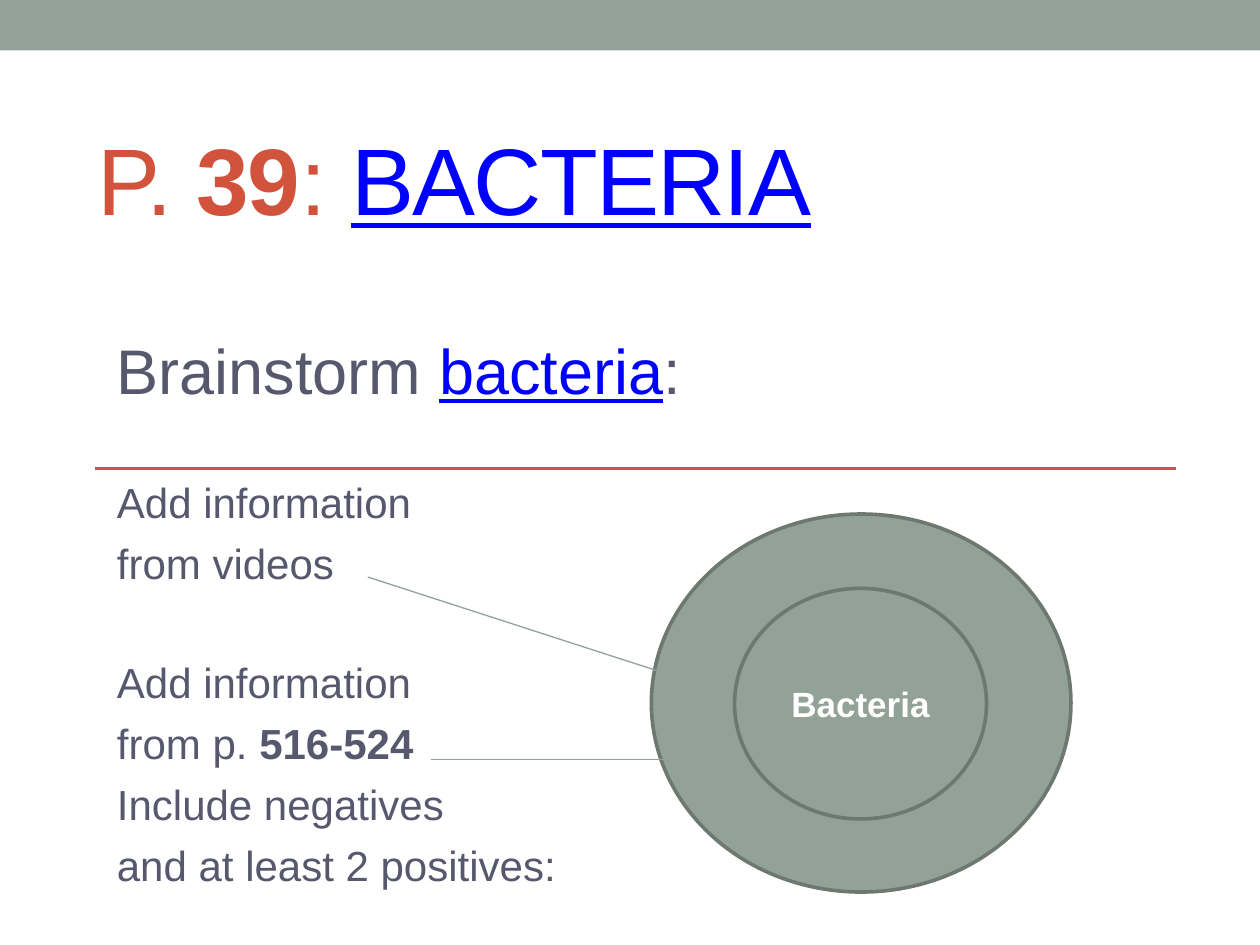
from typing import NamedTuple

from lxml.etree import SubElement
from pptx import Presentation
from pptx.dml.color import RGBColor
from pptx.enum.shapes import MSO_CONNECTOR, MSO_SHAPE
from pptx.enum.text import MSO_ANCHOR as Anchor, MSO_AUTO_SIZE, PP_ALIGN as Align
from pptx.oxml.ns import qn
from pptx.util import Inches, Pt

FONT = "Arial"
SAGE, DARK_SAGE, RUST = "93A299", "6D7871", "D2533C"
SLATE, LINK_BLUE, WHITE = "57576E", "0000FF", "FFFFFF"
LINE_GAP = 6
SECTION_GAP = 39.6  # one 24 pt line plus two line gaps


class Span(NamedTuple):
    text: str
    color: str = SLATE
    bold: bool = False
    underline: bool = False


class Line(NamedTuple):
    spans: list[Span]
    size: float = 24
    before: float = LINE_GAP


class Rule(NamedTuple):
    start: tuple[float, float]
    end: tuple[float, float]
    color: str = SAGE
    width: float = 0.75
    arrow: bool = False


class Figure(NamedTuple):
    kind: MSO_SHAPE
    box: tuple[float, float, float, float]
    outline: str | None = DARK_SAGE


def rgb(color: str) -> RGBColor:
    return RGBColor.from_string(color)


def write_line(paragraph, line: Line, align=Align.LEFT, tracking: int = 0) -> None:
    """Add the spans as runs; tracking is in hundredths of a point."""
    paragraph.alignment = align
    paragraph.space_before = Pt(line.before)
    for span in line.spans:
        run = paragraph.add_run()
        run.text = span.text
        font = run.font
        font.name, font.size = FONT, Pt(line.size)
        font.bold, font.underline = span.bold, span.underline
        font.color.rgb = rgb(span.color)
        if tracking:
            run._r.get_or_add_rPr().set("spc", str(tracking))


def draw_figure(slide, figure: Figure):
    shape = slide.shapes.add_shape(figure.kind, *map(Inches, figure.box))
    shape.shadow.inherit = False
    shape.fill.solid()
    shape.fill.fore_color.rgb = rgb(SAGE)
    if figure.outline:
        shape.line.color.rgb = rgb(figure.outline)
        shape.line.width = Pt(2.08)
    else:
        shape.line.fill.background()
    return shape


def draw_rule(slide, rule: Rule) -> None:
    connector = slide.shapes.add_connector(
        MSO_CONNECTOR.STRAIGHT, *map(Inches, rule.start + rule.end))
    connector.line.color.rgb = rgb(rule.color)
    connector.line.width = Pt(rule.width)
    if rule.arrow:
        SubElement(connector.line._get_or_add_ln(), qn("a:tailEnd"), type="arrow")
    SubElement(connector._element.spPr, qn("a:effectLst"))


def fill_title(slide) -> None:
    title = slide.shapes.title
    title.left, title.top, title.width, title.height = map(
        Inches, (0.67, 0.83, 8.58, 1.08))
    frame = title.text_frame
    frame.auto_size = MSO_AUTO_SIZE.NONE
    frame.vertical_anchor = Anchor.BOTTOM
    spans = [Span("P. ", RUST), Span("39", RUST, bold=True), Span(": ", RUST),
             Span("BACTERIA", LINK_BLUE, underline=True)]
    write_line(frame.paragraphs[0], Line(spans, 54, 0), tracking=-100)


def add_instructions(slide) -> None:
    lines = [
        Line([Span("Brainstorm "), Span("bacteria", LINK_BLUE, underline=True),
              Span(":")], size=36),
        Line([Span("Add information")], before=SECTION_GAP),
        Line([Span("from videos")]),
        Line([Span("Add information")], before=SECTION_GAP),
        Line([Span("from p. "), Span("516-524", bold=True)]),
        Line([Span("Include negatives")]),
        Line([Span("and at least 2 positives:")]),
    ]
    box = slide.shapes.add_textbox(*map(Inches, (0.83, 2.58, 7, 4.71)))
    frame = box.text_frame
    frame.word_wrap = True
    for index, line in enumerate(lines):
        paragraph = frame.add_paragraph() if index else frame.paragraphs[0]
        write_line(paragraph, line)


def main() -> None:
    presentation = Presentation()
    presentation.slide_width, presentation.slide_height = Inches(10), Inches(7.5)
    slide = presentation.slides.add_slide(presentation.slide_layouts[5])

    draw_figure(slide, Figure(MSO_SHAPE.RECTANGLE, (0, 0, 10, 0.4), None))
    draw_rule(slide, Rule((0.75, 3.72), (9.33, 3.72), RUST, 1.5))
    fill_title(slide)
    draw_figure(slide, Figure(MSO_SHAPE.OVAL, (5.17, 4.08, 3.33, 3)))
    add_instructions(slide)

    topic = draw_figure(
        slide, Figure(MSO_SHAPE.FLOWCHART_CONNECTOR, (5.83, 4.67, 2, 1.83)))
    topic.text_frame.vertical_anchor = Anchor.MIDDLE
    write_line(topic.text_frame.paragraphs[0],
               Line([Span("Bacteria", WHITE, bold=True)], 20, 0), Align.CENTER)

    draw_rule(slide, Rule((2.92, 4.58), (5.33, 5.36), arrow=True))
    draw_rule(slide, Rule((3.42, 6.03), (5.33, 6.03)))
    presentation.save("out.pptx")


if __name__ == "__main__":
    main()
